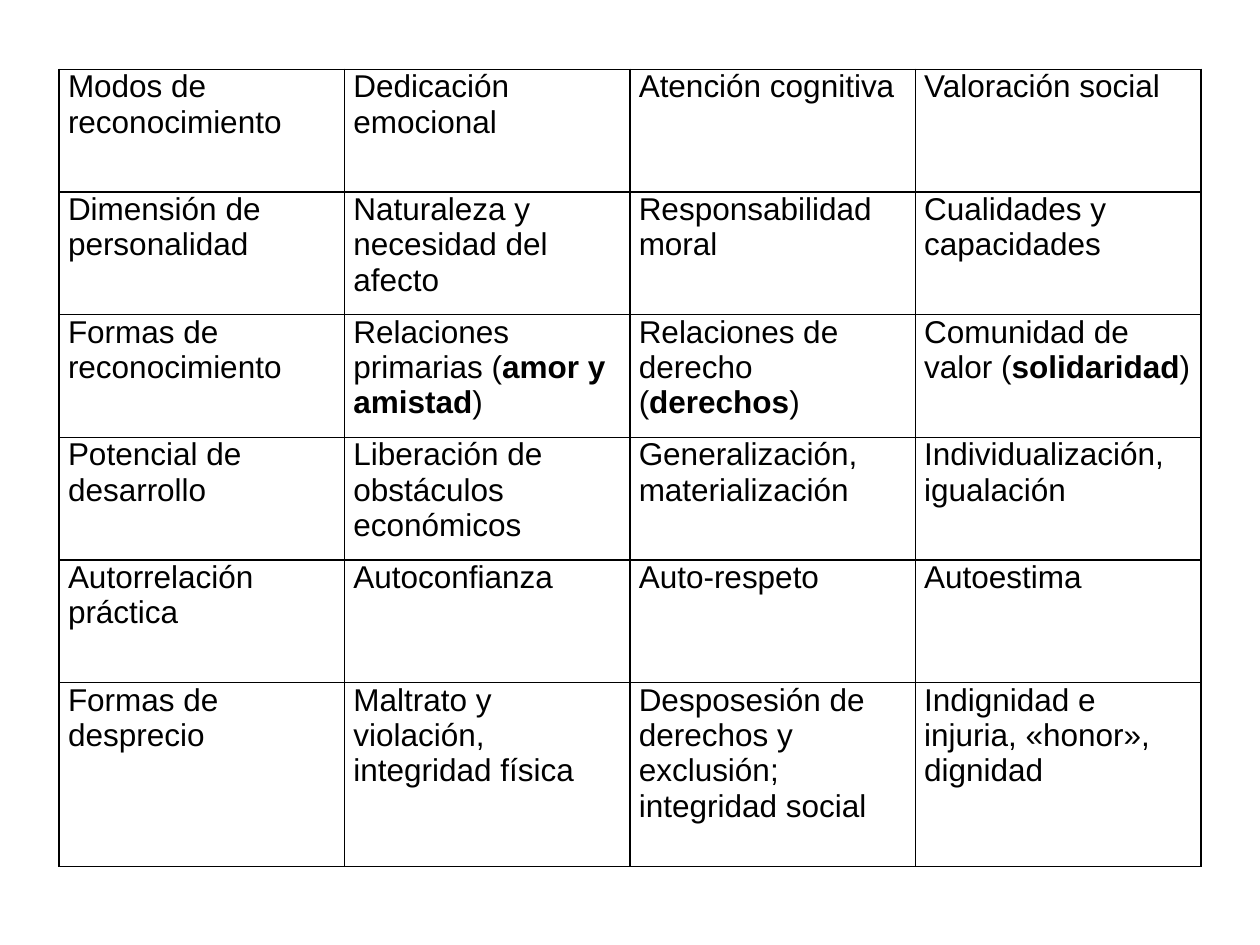
"""Build a slide with a table of forms of recognition."""
from dataclasses import dataclass

from lxml import etree
from pptx import Presentation, util as u
from pptx.dml.color import RGBColor
from pptx.enum import text as t
from pptx.oxml import ns


@dataclass(frozen=True)
class Theme:
    font: str = "Arial"
    size: float = 18
    ink: str = "000000"
    paper: str = "FFFFFF"
    border: float = 1
    inset: float = 0.07


@dataclass(frozen=True)
class Entry:
    plain: str
    strong: str = ""
    ending: str = ""


THEME = Theme()
LEFT, TOP, WIDTH, HEIGHT = 0.47, 0.55, 9.06, 6.33
LAST_ROW = 1.46
ROWS = [
    [Entry("Modos de reconocimiento"), Entry("Dedicación emocional"),
     Entry("Atención cognitiva"), Entry("Valoración social")],
    [Entry("Dimensión de personalidad"), Entry("Naturaleza y necesidad del afecto"),
     Entry("Responsabilidad moral"), Entry("Cualidades y capacidades")],
    [Entry("Formas de reconocimiento"), Entry("Relaciones primarias (", "amor y amistad", ")"),
     Entry("Relaciones de derecho (", "derechos", ")"),
     Entry("Comunidad de valor (", "solidaridad", ")")],
    [Entry("Potencial de desarrollo"), Entry("Liberación de obstáculos económicos"),
     Entry("Generalización, materialización"), Entry("Individualización, igualación")],
    [Entry("Autorrelación práctica"), Entry("Autoconfianza"),
     Entry("Auto-respeto"), Entry("Autoestima")],
    [Entry("Formas de desprecio"), Entry("Maltrato y violación, integridad física"),
     Entry("Desposesión de derechos y exclusión; integridad social"),
     Entry("Indignidad e injuria, «honor», dignidad")],
]


def add_span(para, content: str, *, bold: bool = False, size: float = THEME.size,
             color: str = THEME.ink) -> None:
    span = para.add_run()
    span.text = content
    span.font.name = THEME.font
    span.font.size = u.Pt(size)
    span.font.bold = bold
    span.font.color.rgb = RGBColor.from_string(color)


def add_borders(cell) -> None:
    properties = cell._tc.get_or_add_tcPr()
    for position, side in enumerate(("lnL", "lnR", "lnT", "lnB")):
        line = etree.Element(ns.qn(f"a:{side}"), w=str(u.Pt(THEME.border)))
        fill = etree.SubElement(line, ns.qn("a:solidFill"))
        etree.SubElement(fill, ns.qn("a:srgbClr"), val=THEME.ink)
        properties.insert(position, line)


def fill_cell(cell, entry: Entry) -> None:
    cell.margin_left = cell.margin_right = u.Inches(THEME.inset)
    cell.margin_top = cell.margin_bottom = 0
    cell.vertical_anchor = t.MSO_ANCHOR.TOP
    cell.fill.solid()
    cell.fill.fore_color.rgb = RGBColor.from_string(THEME.paper)
    add_borders(cell)
    para = cell.text_frame.paragraphs[0]
    add_span(para, entry.plain)
    if entry.strong:
        add_span(para, entry.strong, bold=True)
        add_span(para, entry.ending)


def add_recognition_table(page, rows: list[list[Entry]]) -> None:
    table = page.shapes.add_table(len(rows), len(rows[0]), u.Inches(LEFT), u.Inches(TOP),
                                  u.Inches(WIDTH), u.Inches(HEIGHT)).table
    table.first_row = table.horz_banding = False
    for column in table.columns:
        column.width = u.Inches(WIDTH / len(rows[0]))
    for row in table.rows:
        row.height = u.Inches((HEIGHT - LAST_ROW) / (len(rows) - 1))
    table.rows[len(rows) - 1].height = u.Inches(LAST_ROW)
    for row, entries in zip(table.rows, rows):
        for cell, entry in zip(row.cells, entries):
            fill_cell(cell, entry)


def main() -> None:
    deck = Presentation()
    deck.slide_width, deck.slide_height = u.Inches(10), u.Inches(7.5)
    page = deck.slides.add_slide(deck.slide_layouts[6])
    add_recognition_table(page, ROWS)
    deck.save("out.pptx")


if __name__ == "__main__":
    main()
